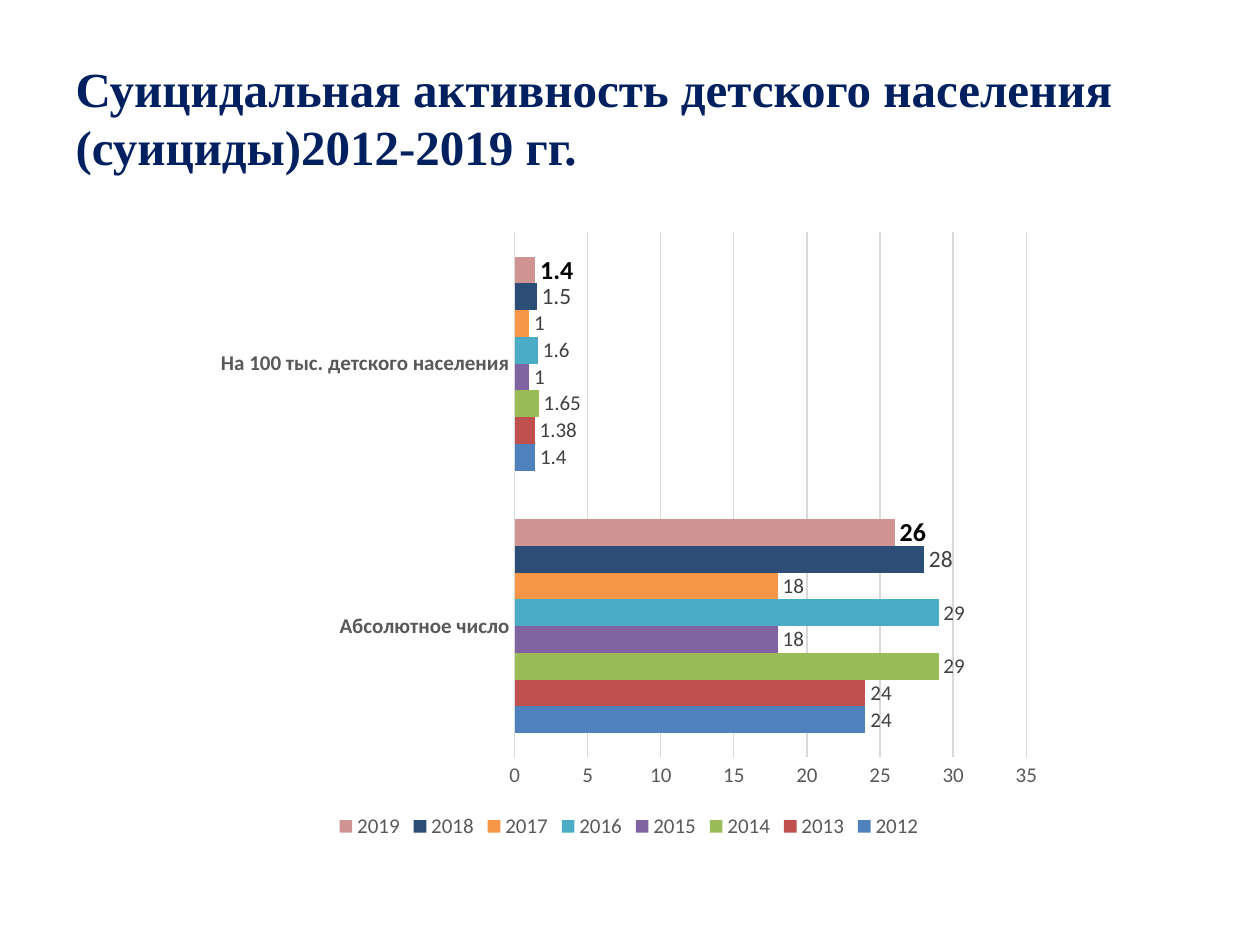
from dataclasses import dataclass

from pptx import Presentation
from pptx.chart.data import CategoryChartData
from pptx.dml.color import RGBColor
from pptx.enum.chart import XL_CHART_TYPE as ChartType
from pptx.enum.chart import XL_LABEL_POSITION as LabelPosition
from pptx.enum.chart import XL_LEGEND_POSITION as LegendPosition
from pptx.enum.chart import XL_TICK_MARK as TickMark
from pptx.enum.text import MSO_ANCHOR as Anchor
from pptx.enum.text import PP_ALIGN as Align
from pptx.util import Emu, Pt

PX = 914400 / 126


@dataclass(frozen=True)
class Theme:
    heading_font: str = "Times New Roman"
    body_font: str = "Calibri"
    heading: str = "002060"
    axis: str = "595959"
    label: str = "404040"
    strong: str = "000000"
    grid: str = "D9D9D9"
    heading_size: float = 28
    body_size: float = 12
    recent_size: float = 13.4
    strong_size: float = 14.8
    line_width: float = 0.75


class SlideBuilder:
    """Draws titles and bar charts on one slide in one theme."""

    def __init__(self, slide, theme):
        self.slide = slide
        self.theme = theme

    def box(self, *lengths):
        return [Emu(round(length * PX)) for length in lengths]

    def style(self, font, size, color, bold=False, name=None):
        font.name = name or self.theme.body_font
        font.size = Pt(size)
        font.bold = bold
        font.color.rgb = RGBColor.from_string(color)

    def rule(self, line):
        line.color.rgb = RGBColor.from_string(self.theme.grid)
        line.width = Pt(self.theme.line_width)

    def title(self, wording, *place):
        heading = self.slide.shapes.title
        heading.left, heading.top, heading.width, heading.height = self.box(*place)
        frame = heading.text_frame
        frame.word_wrap = True
        frame.vertical_anchor = Anchor.MIDDLE
        paragraph = frame.paragraphs[0]
        paragraph.alignment = Align.LEFT
        run = paragraph.add_run()
        run.text = wording
        self.style(run.font, self.theme.heading_size, self.theme.heading, True,
                   self.theme.heading_font)

    def bar_chart(self, categories, years, *place):
        figures = CategoryChartData()
        figures.categories = categories
        for year, values, *_ in years:
            figures.add_series(year, values)
        chart = self.slide.shapes.add_chart(
            ChartType.BAR_CLUSTERED, *self.box(*place), figures).chart
        theme = self.theme
        self.style(chart.font, theme.body_size, theme.axis)
        chart.has_title = False
        chart.has_legend = True
        chart.legend.position = LegendPosition.BOTTOM
        chart.legend.include_in_layout = False
        self.style(chart.legend.font, theme.body_size, theme.axis)
        self.axes(chart)
        bars = chart.plots[0]
        bars.gap_width = 182
        bars.vary_by_categories = False
        for series, (_, _, color, size, ink, bold) in zip(bars.series, years):
            series.format.fill.solid()
            series.format.fill.fore_color.rgb = RGBColor.from_string(color)
            labels = series.data_labels
            labels.show_value = True
            labels.position = LabelPosition.OUTSIDE_END
            self.style(labels.font, size, ink, bold)

    def axes(self, chart):
        for axis in (chart.category_axis, chart.value_axis):
            axis.major_tick_mark = axis.minor_tick_mark = TickMark.NONE
            self.style(axis.tick_labels.font, self.theme.body_size, self.theme.axis,
                       axis is chart.category_axis)
        category, value = chart.category_axis, chart.value_axis
        category.tick_labels.font.bold = True
        category.has_major_gridlines = False
        self.rule(category.format.line)
        value.has_major_gridlines = True
        self.rule(value.major_gridlines.format.line)
        value.format.line.fill.background()
        value.minimum_scale, value.maximum_scale, value.major_unit = 0, 35, 5


def main():
    deck = Presentation()
    deck.slide_width, deck.slide_height = Emu(round(1260 * PX)), Emu(round(945 * PX))
    theme = Theme()
    builder = SlideBuilder(deck.slides.add_slide(deck.slide_layouts[5]), theme)
    builder.title("Суицидальная активность детского населения (суициды)2012-2019 гг.",
                  63, 38, 1134, 158)
    plain = (theme.body_size, theme.label, False)
    recent = (theme.recent_size, theme.label, False)
    strong = (theme.strong_size, theme.strong, True)
    years = [
        ("2012", (24, 1.4), "4F81BD", *plain),
        ("2013", (24, 1.38), "C0504D", *plain),
        ("2014", (29, 1.65), "9BBB59", *plain),
        ("2015", (18, 1), "8064A2", *plain),
        ("2016", (29, 1.6), "4BACC6", *plain),
        ("2017", (18, 1), "F79646", *plain),
        ("2018", (28, 1.5), "2C4D75", *recent),
        ("2019", (26, 1.4), "D09493", *strong),
    ]
    builder.bar_chart(["Абсолютное число", "На 100 тыс. детского населения"], years,
                      204, 220, 850, 624)
    deck.save("out.pptx")


if __name__ == "__main__":
    main()
